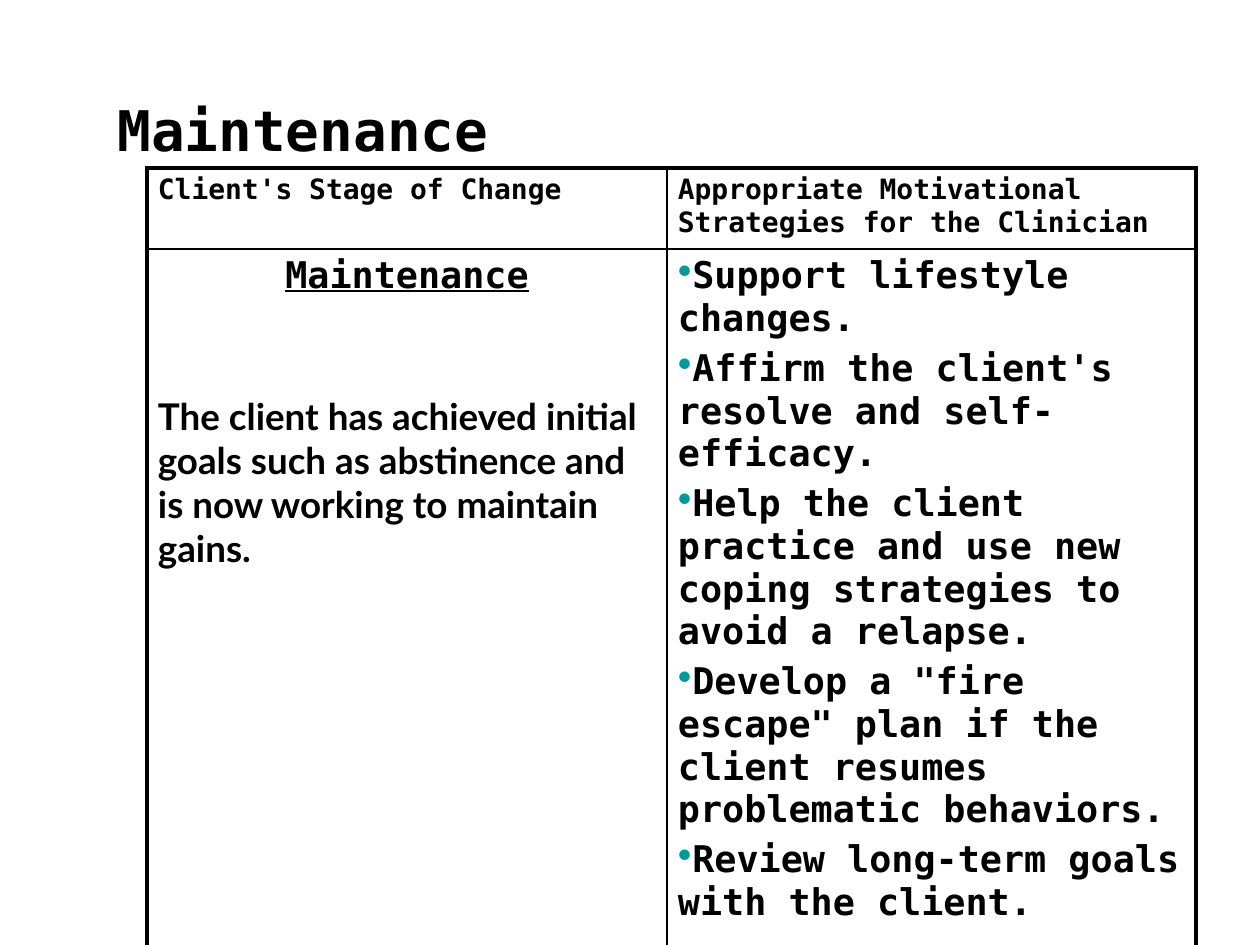
from lxml.etree import SubElement
from pptx import Presentation
from pptx.dml.color import RGBColor
from pptx.enum.text import MSO_ANCHOR as Anchor, PP_ALIGN as Align
from pptx.oxml import parse_xml
from pptx.oxml.ns import nsdecls, qn
from pptx.util import Pt

BLACK = RGBColor(0x00, 0x00, 0x00)
TEAL = RGBColor(0x00, 0x99, 0x99)
MONO = "DejaVu Sans Mono"
SANS = "Lato"
THICK, THIN = Pt(2.25), Pt(1)

HEADINGS = [
    "Client's Stage of Change",
    "Appropriate Motivational Strategies for the Clinician",
]
STAGE = "Maintenance"
DESCRIPTION = (
    "The client has achieved initial goals such as abstinence "
    "and is now working to maintain gains."
)
STRATEGIES = [
    "Support lifestyle changes.",
    "Affirm the client's resolve and self-efficacy.",
    "Help the client practice and use new coping strategies to avoid a relapse.",
    "Develop a \"fire escape\" plan if the client resumes problematic behaviors.",
    "Review long-term goals with the client.",
]


def px(length):
    return round(length * 914400 / 126)


def style(paragraph, size, face=MONO, underline=False):
    for run in paragraph.runs:
        font = run.font
        font.name, font.size, font.bold = face, Pt(size), True
        font.underline = underline
        font.color.rgb = BLACK


def add_bullet(paragraph):
    properties = paragraph._p.get_or_add_pPr()
    color = SubElement(properties, qn("a:buClr"))
    SubElement(color, qn("a:srgbClr"), val=str(TEAL))
    SubElement(properties, qn("a:buSzPct"), val="110000")
    SubElement(properties, qn("a:buChar"), char="•")


def set_borders(cell, **widths):
    properties = cell._tc.get_or_add_tcPr()
    for place, side in enumerate("LRTB"):
        properties.insert(place, parse_xml(
            f'<a:ln{side} {nsdecls("a")} w="{int(widths[side])}"><a:solidFill>'
            f'<a:srgbClr val="{BLACK}"/></a:solidFill></a:ln{side}>'
        ))


def add_title(slide, left, top, width, height):
    frame = slide.shapes.add_textbox(px(left), px(top), px(width), px(height)).text_frame
    frame.word_wrap = True
    frame.vertical_anchor = Anchor.TOP
    frame.margin_top = px(12)
    frame.text = STAGE
    style(frame.paragraphs[0], 32)


def fill_stage(frame):
    frame.text = f"{STAGE}\n{DESCRIPTION}"
    stage, description = frame.paragraphs
    stage.alignment = Align.CENTER
    style(stage, 21, underline=True)
    description.space_before = Pt(55)
    style(description, 21, SANS)


def fill_strategies(frame):
    frame.text = "\n".join(STRATEGIES)
    for index, strategy in enumerate(frame.paragraphs):
        if index:
            strategy.space_before = Pt(4.2)
        add_bullet(strategy)
        style(strategy, 21)


def add_strategy_table(slide, left, top, column_widths, row_heights):
    table = slide.shapes.add_table(
        len(row_heights), len(column_widths), px(left), px(top),
        px(sum(column_widths)), px(sum(row_heights)),
    ).table
    table.first_row = table.horz_banding = False
    for column, width in zip(table.columns, column_widths):
        column.width = px(width)
    for row, height in zip(table.rows, row_heights):
        row.height = px(height)

    last_row, last_column = len(row_heights) - 1, len(column_widths) - 1
    for r, row in enumerate(table.rows):
        for c, cell in enumerate(row.cells):
            cell.margin_left = cell.margin_right = px(11)
            cell.margin_top = cell.margin_bottom = px(6)
            cell.fill.background()
            set_borders(
                cell,
                L=THIN if c else THICK,
                R=THICK if c == last_column else THIN,
                T=THIN if r else THICK,
                B=THICK if r == last_row else THIN,
            )

    for c, heading in enumerate(HEADINGS):
        frame = table.cell(0, c).text_frame
        frame.text = heading
        style(frame.paragraphs[0], 16)
    fill_stage(table.cell(1, 0).text_frame)
    fill_strategies(table.cell(1, 1).text_frame)


def main():
    deck = Presentation()
    deck.slide_width, deck.slide_height = px(1260), px(945)
    slide = deck.slides.add_slide(deck.slide_layouts[6])
    add_title(slide, 105, 84, 1102, 116)
    add_strategy_table(slide, 147, 168, [520, 529], [81, 577])
    deck.save("out.pptx")


if __name__ == "__main__":
    main()
